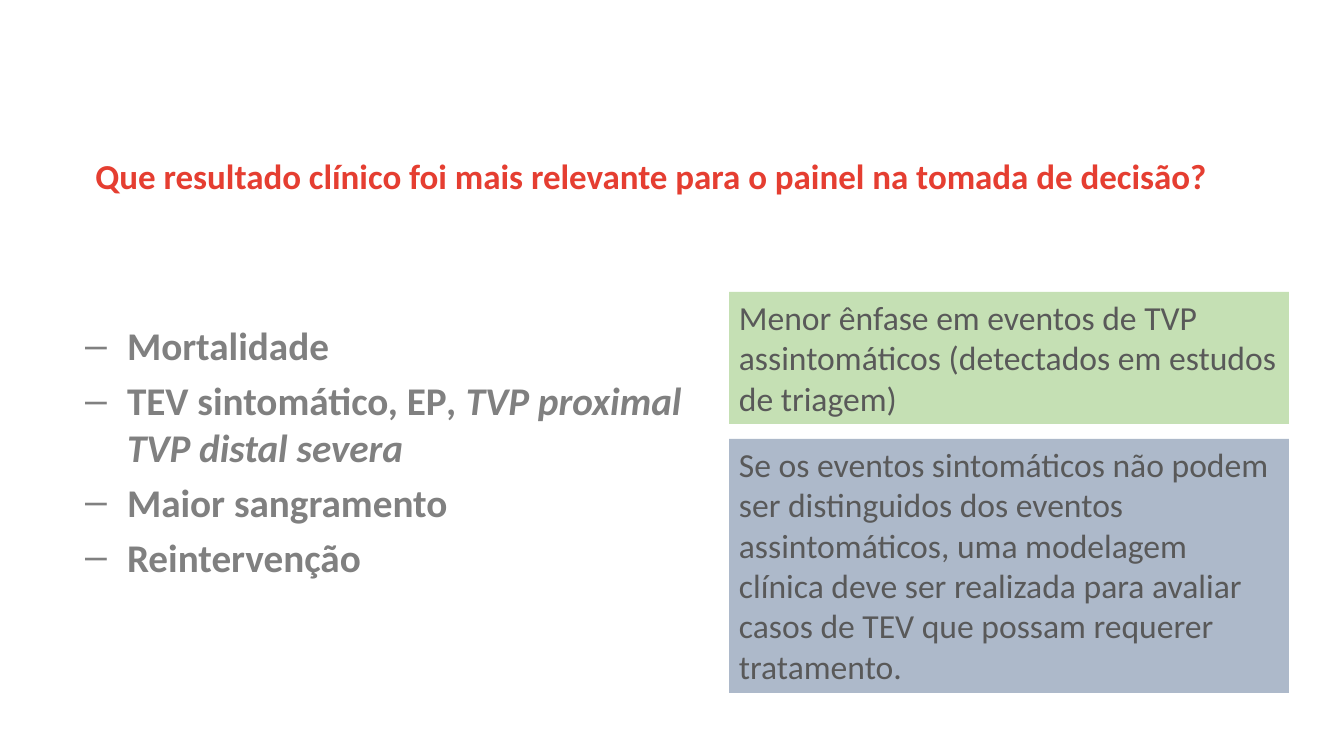
from lxml.etree import SubElement
from pptx import Presentation
from pptx.dml.color import RGBColor
from pptx.enum.shapes import MSO_SHAPE as Shape
from pptx.enum.text import MSO_ANCHOR as Anchor, MSO_AUTO_SIZE as AutoSize, PP_ALIGN as Align
from pptx.oxml.ns import qn
from pptx.util import Pt

EMU_PER_PX = 914400 / 100.8
COLORS = {"title": "E53E31", "outcome": "808080", "note": "595959",
          "green": "C5E0B4", "blue": "ADB9CA"}

# Each outcome: lines of (text, italic) pieces
OUTCOMES = [
    [[("Mortalidade", False)]],
    [[("TEV sintomático, EP", False), (", TVP proximal", True)],
     [("TVP distal severa", True)]],
    [[("Maior sangramento", False)]],
    [[("Reintervenção", False)]],
]
NOTES = [
    ("Menor ênfase em eventos de TVP assintomáticos (detectados em estudos de triagem)",
     "green", 132),
    ("Se os eventos sintomáticos não podem ser distinguidos dos eventos assintomáticos, "
     "uma modelagem clínica deve ser realizada para avaliar casos de TEV que possam "
     "requerer tratamento.", "blue", 254),
]


def px(length):
    return round(length * EMU_PER_PX)


def rgb(name):
    return RGBColor.from_string(COLORS[name])


def set_font(paragraph, size, color, bold=False):
    font = paragraph.font
    font.name, font.size, font.bold = "Calibri", Pt(size), bold
    font.color.rgb = rgb(color)


def add_title(slide, left, top, width, height):
    title = slide.shapes.title
    title.left, title.top, title.width, title.height = map(px, (left, top, width, height))
    frame = title.text_frame
    frame.auto_size = AutoSize.NONE
    frame.vertical_anchor = Anchor.TOP
    frame.text = "Que resultado clínico foi mais relevante para o painel na tomada de decisão?"
    question = frame.paragraphs[0]
    question.alignment = Align.CENTER
    set_font(question, 25, "title", bold=True)


def add_dash(paragraph, margin, hanging):
    properties = paragraph._p.get_or_add_pPr()
    properties.set("marL", str(px(margin)))
    properties.set("indent", str(-px(hanging)))
    SubElement(properties, qn("a:buFont")).set("typeface", "Arial")
    SubElement(properties, qn("a:buChar")).set("char", "–")


def add_outcomes(slide, left, top, width, height):
    frame = slide.shapes.add_textbox(*map(px, (left, top, width, height))).text_frame
    frame.word_wrap = True
    frame.margin_left = frame.margin_top = frame.margin_right = frame.margin_bottom = 0
    for index, lines in enumerate(OUTCOMES):
        outcome = frame.add_paragraph() if index else frame.paragraphs[0]
        if index:
            outcome.space_before = Pt(5.6)
        add_dash(outcome, margin=109, hanging=42)
        set_font(outcome, 28, "outcome", bold=True)
        for number, pieces in enumerate(lines):
            if number:
                outcome.add_line_break()
            for text, italic in pieces:
                run = outcome.add_run()
                run.text = text
                run.font.italic = italic


def add_notes(slide, left, top, width, gap):
    for text, color, height in NOTES:
        note = slide.shapes.add_shape(Shape.RECTANGLE, *map(px, (left, top, width, height)))
        note.shadow.inherit = False
        note.fill.solid()
        note.fill.fore_color.rgb = rgb(color)
        note.line.fill.background()
        frame = note.text_frame
        frame.word_wrap = True
        frame.vertical_anchor = Anchor.TOP
        frame.text = text
        frame.paragraphs[0].alignment = Align.LEFT
        set_font(frame.paragraphs[0], 24, "note")
        top += height + gap


def main():
    deck = Presentation()
    deck.slide_width, deck.slide_height = px(1344), px(756)
    slide = deck.slides.add_slide(deck.slide_layouts[5])
    add_title(slide, 46, 149, 1210, 79)
    add_outcomes(slide, 18, 321, 690, 323)
    add_notes(slide, 729, 292, 560, gap=15)
    deck.save("out.pptx")


if __name__ == "__main__":
    main()
